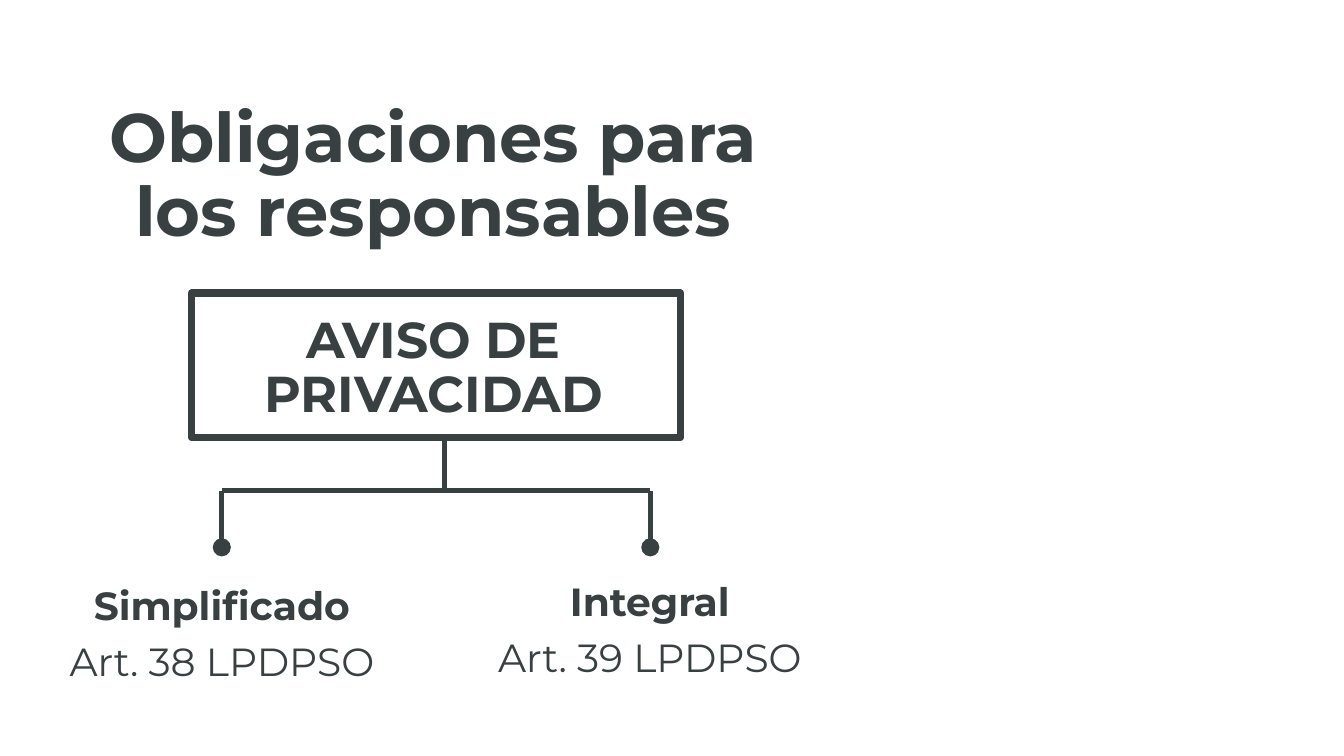
from lxml.etree import SubElement
from pptx import Presentation
from pptx.dml.color import RGBColor
from pptx.enum.shapes import MSO_CONNECTOR, MSO_SHAPE
from pptx.enum.text import MSO_ANCHOR, PP_ALIGN
from pptx.oxml.ns import qn
from pptx.util import Inches, Pt

SLATE = RGBColor(0x38, 0x40, 0x42)
WHITE = RGBColor(0xFF, 0xFF, 0xFF)
FACE = "Montserrat"


def format(item, values):
    """Set every attribute named in the dict on the item."""
    for name, value in values.items():
        setattr(item, name, value)


def write(frame, lines, size, anchor=MSO_ANCHOR.MIDDLE):
    """Fill a text frame with centred (text, bold) lines."""
    format(frame, {"word_wrap": True, "vertical_anchor": anchor})
    for index, (text, bold) in enumerate(lines):
        para = frame.add_paragraph() if index else frame.paragraphs[0]
        para.text = text
        format(para, {"alignment": PP_ALIGN.CENTER, "line_spacing": 0.9,
                      "space_before": Pt(10 if index else 0)})
        format(para.font, {"name": FACE, "size": Pt(size), "bold": bold})
        para.font.color.rgb = SLATE


def head(slide, box, text):
    """Place and format the title placeholder in the box."""
    title = slide.shapes.title
    format(title, dict(zip(("left", "top", "width", "height"), map(Inches, box))))
    write(title.text_frame, [(text, True)], 49)


def notice(slide, box, text):
    """Draw the framed notice at the root of the tree."""
    frame = slide.shapes.add_shape(MSO_SHAPE.RECTANGLE, *map(Inches, box))
    frame.shadow.inherit = False
    frame.fill.background()
    frame.line.color.rgb = SLATE
    frame.line.width = Pt(5.5)
    format(frame.text_frame, {"margin_left": Inches(0.35), "margin_right": Inches(0.4),
                              "margin_top": Inches(0.2), "margin_bottom": Inches(0.12)})
    write(frame.text_frame, [(text, True)], 36)


def rule(slide, start, end):
    """Draw one straight line of the tree."""
    line = slide.shapes.add_connector(MSO_CONNECTOR.STRAIGHT, *map(Inches, start + end))
    line.line.color.rgb = SLATE
    line.line.width = Pt(3.75)
    SubElement(line._element.spPr, qn("a:effectLst"))


def tree(slide, box, stem, size=0.18):
    """Draw a stem, a bar and two drops with end dots in the box."""
    left, top, width, height = box
    right, foot, bar = left + width, top + height, top + height / 2
    rule(slide, (left, bar), (right, bar))
    rule(slide, (stem, bar), (stem, top))
    for end in (left, right):
        rule(slide, (end, foot), (end, bar))
        dot = slide.shapes.add_shape(
            MSO_SHAPE.OVAL, *map(Inches, (end - size / 2, foot - size / 2, size, size)))
        dot.shadow.inherit = False
        dot.fill.solid()
        dot.fill.fore_color.rgb = SLATE
        dot.line.fill.background()


def leaf(slide, box, name, source):
    """Write a bold name above its legal source in the box."""
    label = slide.shapes.add_textbox(*map(Inches, box))
    write(label.text_frame, [(name, True), (source, False)], 28, MSO_ANCHOR.TOP)


def main():
    """Build the slide and save it."""
    deck = Presentation()
    format(deck, {"slide_width": Inches(13.33), "slide_height": Inches(7.5)})
    slide = deck.slides.add_slide(deck.slide_layouts[5])
    slide.background.fill.solid()
    slide.background.fill.fore_color.rgb = WHITE
    head(slide, (0.86, 0.96, 6.87, 1.6), "Obligaciones para los responsables")
    notice(slide, (1.9, 2.91, 4.85, 1.43), "AVISO DE PRIVACIDAD")
    tree(slide, (2.2, 4.31, 4.25, 1.12), 4.41)
    leaf(slide, (0.54, 5.77, 3.32, 1.15), "Simplificado", "Art. 38 LPDPSO")
    leaf(slide, (4.81, 5.73, 3.27, 1.19), "Integral", "Art. 39 LPDPSO")
    deck.save("out.pptx")


if __name__ == "__main__":
    main()
